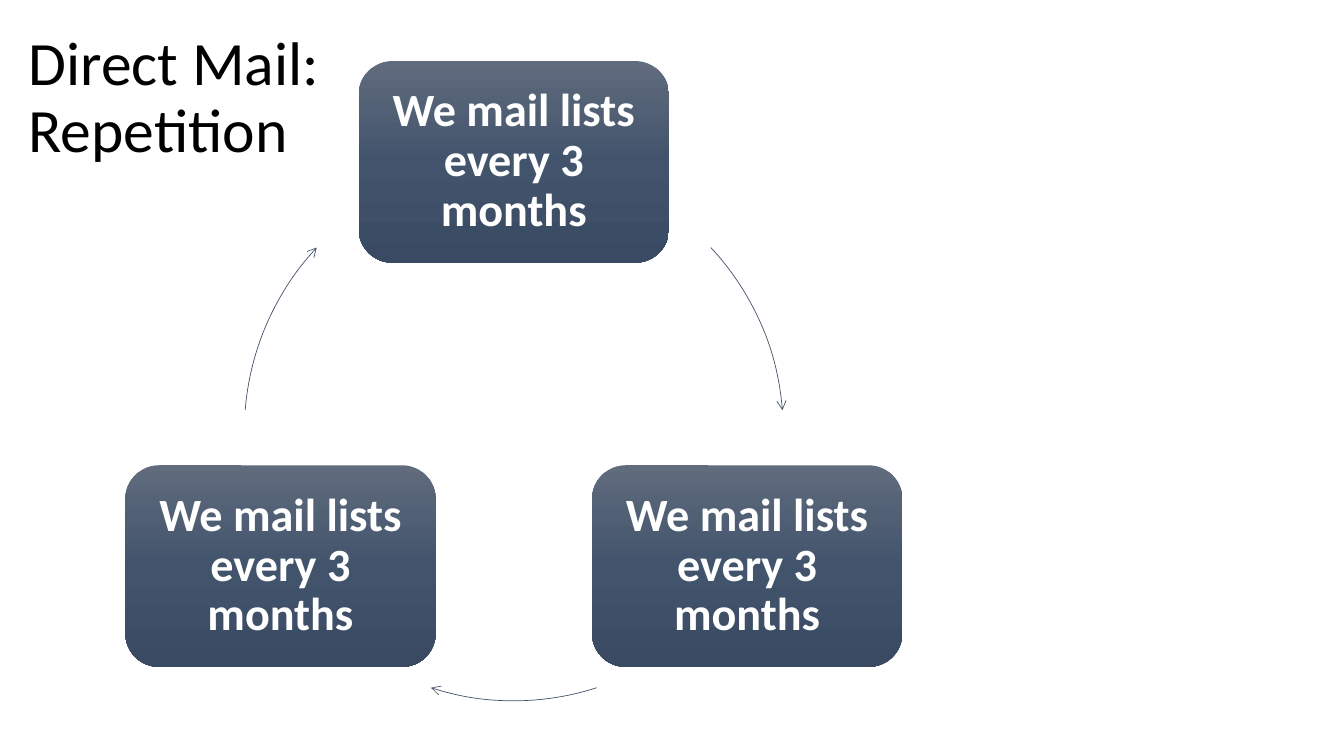
from math import cos, radians, sin

from lxml.etree import SubElement
from pptx import Presentation
from pptx.dml.color import RGBColor
from pptx.enum.shapes import MSO_SHAPE
from pptx.enum.text import MSO_ANCHOR, MSO_AUTO_SIZE, PP_ALIGN
from pptx.oxml.ns import qn
from pptx.util import Cm, Pt


def color(hex_value):
    return RGBColor.from_string(hex_value)


class CycleSlide:
    font = "Calibri"
    text_color = "FFFFFF"
    title_color = "000000"
    line_color = "44546A"
    gradient = ((0, "606B7D"), (50, "42546C"), (100, "394A62"))
    center_x, center_y, radius = 12.95, 10.87, 6.79
    box_w, box_h = 7.82, 5.08

    def __init__(self, prs):
        self.s = prs.slides.add_slide(prs.slide_layouts[5])

    def format_text(self, tf, size, hex_value, align, bold=False):
        tf.word_wrap = True
        tf.auto_size = MSO_AUTO_SIZE.NONE
        tf.vertical_anchor = MSO_ANCHOR.MIDDLE
        for p in tf.paragraphs:
            p.alignment = align
            p.line_spacing = 0.9
            p.font.name = self.font
            p.font.size = Pt(size)
            p.font.bold = bold
            p.font.color.rgb = color(hex_value)

    def title(self, text, left, top, width, height):
        sp = self.s.shapes.title
        sp.left, sp.top = Cm(left), Cm(top)
        sp.width, sp.height = Cm(width), Cm(height)
        sp.text_frame.text = text
        self.format_text(sp.text_frame, 44, self.title_color, PP_ALIGN.LEFT)

    def fill_gradient(self, sp):
        sp.fill.gradient()
        sp.fill.gradient_angle = 270
        stops = sp._element.spPr.find(qn("a:gradFill")).find(qn("a:gsLst"))
        for stop in list(stops):
            stops.remove(stop)
        for percent, hex_value in self.gradient:
            stop = SubElement(stops, qn("a:gs"), pos=str(percent * 1000))
            SubElement(stop, qn("a:srgbClr"), val=hex_value)

    def box(self, text, angle):
        x = self.center_x + self.radius * cos(radians(angle))
        y = self.center_y + self.radius * sin(radians(angle))
        sp = self.s.shapes.add_shape(
            MSO_SHAPE.ROUNDED_RECTANGLE,
            Cm(x - self.box_w / 2), Cm(y - self.box_h / 2),
            Cm(self.box_w), Cm(self.box_h))
        sp.shadow.inherit = False
        sp.line.fill.background()
        self.fill_gradient(sp)
        tf = sp.text_frame
        tf.text = text
        tf.margin_left = tf.margin_right = Cm(0.6)
        tf.margin_top = tf.margin_bottom = Cm(0.6)
        self.format_text(tf, 33, self.text_color, PP_ALIGN.CENTER, bold=True)

    def arc_arrow(self, start, end):
        sp = self.s.shapes.add_shape(
            MSO_SHAPE.ARC,
            Cm(self.center_x - self.radius), Cm(self.center_y - self.radius),
            Cm(2 * self.radius), Cm(2 * self.radius))
        sp.shadow.inherit = False
        sp.fill.background()
        sp.adjustments[0] = start * 0.6
        sp.adjustments[1] = end * 0.6
        sp.line.color.rgb = color(self.line_color)
        sp.line.width = Pt(0.5)
        SubElement(sp.line._get_or_add_ln(), qn("a:tailEnd"), type="arrow")


def main():
    prs = Presentation()
    prs.slide_width, prs.slide_height = Cm(33.87), Cm(19.05)
    slide = CycleSlide(prs)
    slide.title("Direct Mail: \vRepetition", 0.46, 0.66, 14.1, 3.68)
    steps = (
        (270, 317, 355.5),
        (30, 72.1, 107.9),
        (150, 184.5, 223),
    )
    for angle, start, end in steps:
        slide.box("We mail lists every 3 months", angle)
        slide.arc_arrow(start, end)
    prs.save("out.pptx")


if __name__ == "__main__":
    main()
